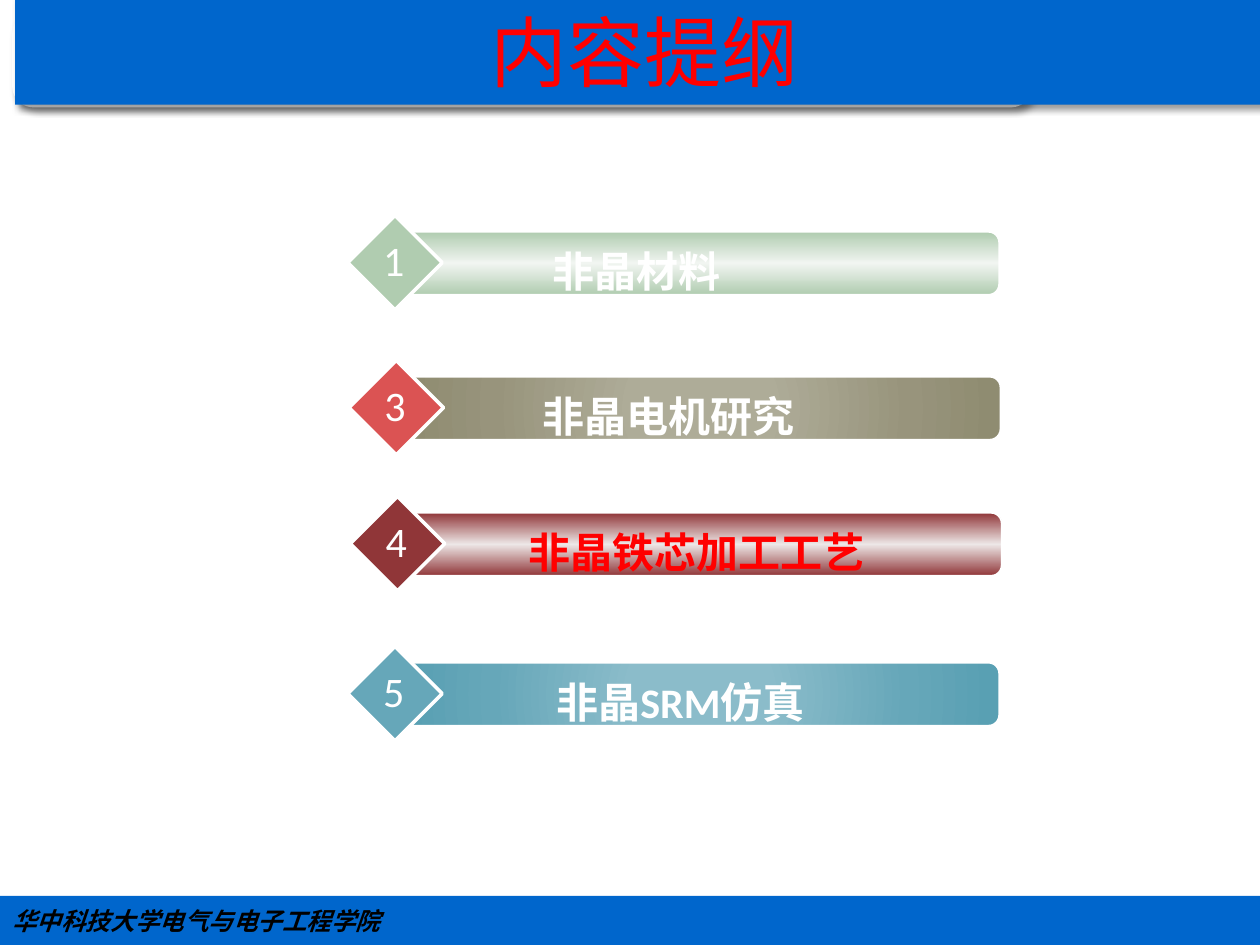
from lxml import etree
from pptx import Presentation
from pptx.dml.color import RGBColor
from pptx.enum.shapes import MSO_SHAPE
from pptx.enum.text import MSO_ANCHOR, MSO_AUTO_SIZE, PP_ALIGN
from pptx.oxml.ns import qn
from pptx.util import Inches, Pt

RECT, ROUND, DIAMOND = MSO_SHAPE.RECTANGLE, MSO_SHAPE.ROUNDED_RECTANGLE, MSO_SHAPE.DIAMOND
LEFT, CENTER, MIDDLE = PP_ALIGN.LEFT, PP_ALIGN.CENTER, MSO_ANCHOR.MIDDLE
FIT_SHAPE = MSO_AUTO_SIZE.SHAPE_TO_FIT_TEXT

BLUE = RGBColor(0x00, 0x66, 0xCC)
RED = RGBColor(0xFF, 0x00, 0x00)
BLACK = RGBColor(0x00, 0x00, 0x00)
WHITE = RGBColor(0xFF, 0xFF, 0xFF)
GREEN, PALE_GREEN = RGBColor(0xB0, 0xCC, 0xB0), RGBColor(0xF1, 0xF5, 0xF1)
CORAL = RGBColor(0xDB, 0x53, 0x53)
MAROON, PALE_MAROON = RGBColor(0x90, 0x36, 0x38), RGBColor(0xED, 0xE7, 0xE7)
TEAL, PALE_TEAL, DEEP_TEAL = (RGBColor(0x66, 0xA7, 0xB9), RGBColor(0x8B, 0xBC, 0xCA),
                              RGBColor(0x59, 0xA0, 0xB3))
OLIVE, PALE_OLIVE, DEEP_OLIVE = (RGBColor(0x98, 0x94, 0x7C), RGBColor(0xAE, 0xAC, 0x98),
                                 RGBColor(0x8F, 0x8C, 0x71))
LILAC, SKY, SAGE = (RGBColor(0x84, 0x88, 0xC4), RGBColor(0xD4, 0xDE, 0xFF),
                    RGBColor(0x96, 0xAB, 0x94))


def banded(edge, middle):
    return [(0, edge), (50, middle), (100, edge)]


def radial(pale, mid, deep):
    return [(0, pale), (23, pale), (69, mid), (97, deep)]


class Deck:
    """Style and current slide; lengths are cells of a 100 x 75 grid."""
    latin, cjk = "Calibri", "Noto Sans CJK SC"

    def __init__(self, prs):
        self.prs = prs
        self.cell = prs.slide_width / 100
        self.s = prs.slides.add_slide(prs.slide_layouts[5])

    def box(self, *cells):
        return [round(c * self.cell) for c in cells]

    def set_text(self, sp, text, size, color, font=latin, align=CENTER,
                 bold=False, italic=False, indent=0):
        p = sp.text_frame.paragraphs[0]
        p.text = text
        p.alignment = align
        f = p.font
        f.size, f.bold, f.italic, f.name = Pt(size), bold, italic, font
        f.color.rgb = color
        pPr = p._p.get_or_add_pPr()
        if indent:
            pPr.set("marL", str(self.box(indent)[0]))
            pPr.set("indent", "0")
        etree.SubElement(pPr.find(qn("a:defRPr")), qn("a:ea"), typeface=self.cjk)

    def shape(self, kind, cells, fill=None, line=None, width=1):
        sp = self.s.shapes.add_shape(kind, *self.box(*cells))
        sp.shadow.inherit = False
        if fill is not None:
            sp.fill.solid()
            sp.fill.fore_color.rgb = fill
        if line is None:
            sp.line.fill.background()
        else:
            sp.line.color.rgb = line
            sp.line.width = Pt(width)
        return sp

    def gradient(self, sp, stops, circle=False):
        sp.fill.gradient()
        grad = sp._element.spPr.find(qn("a:gradFill"))
        for child in list(grad):
            grad.remove(child)
        gs_list = etree.SubElement(grad, qn("a:gsLst"))
        for pos, color in stops:
            gs = etree.SubElement(gs_list, qn("a:gs"), pos=str(pos * 1000))
            etree.SubElement(gs, qn("a:srgbClr"), val=str(color))
        if circle:
            way = etree.SubElement(grad, qn("a:path"), path="circle")
            etree.SubElement(way, qn("a:fillToRect"), l="50000", t="50000",
                             r="50000", b="50000")
        else:
            etree.SubElement(grad, qn("a:lin"), ang="5400000", scaled="1")

    def shadow(self, sp):
        sp.shadow.inherit = False
        effects = sp._element.spPr.find(qn("a:effectLst"))
        outer = etree.SubElement(effects, qn("a:outerShdw"), blurRad=str(Pt(4)),
                                 dist=str(Pt(3)), dir="2700000", algn="tl", rotWithShape="0")
        color = etree.SubElement(outer, qn("a:srgbClr"), val=str(BLACK))
        etree.SubElement(color, qn("a:alpha"), val="40000")

    def title(self, text, cells):
        sp = self.s.shapes.title
        sp.left, sp.top, sp.width, sp.height = self.box(*cells)
        sp.fill.solid()
        sp.fill.fore_color.rgb = BLUE
        self.shadow(sp)
        sp.text_frame.vertical_anchor = MIDDLE
        self.set_text(sp, text, 44, RED, font=self.cjk)
        self.s.shapes._spTree.append(sp._element)  # above the backing panel

    def text(self, text, cells, wrap=True, color=WHITE, **style):
        sp = self.s.shapes.add_textbox(*self.box(*cells))
        sp.text_frame.word_wrap = wrap
        sp.text_frame.auto_size = FIT_SHAPE
        self.set_text(sp, text, 24, color, **style)

    def item(self, number, label, x, y, label_x, indent, color, tile, stops, circle):
        bar = self.shape(ROUND, (x + 4.2, y + 1.3, 47.5, 5), line=WHITE)
        bar.adjustments[0] = 0.17
        self.gradient(bar, stops, circle)
        self.shape(DIAMOND, (x, y, 7.5, 7.5), tile, WHITE, 2)
        self.text(label, (label_x, y + 1.9, 37.5, 5), color=color, bold=True, indent=indent)
        self.text(number, (x + 1.7, y + 1, 3.9, 5), wrap=False)


# number, label, left, top, label left, label indent, label colour, tile, bar, circular
ITEMS = [
    ("1", "非晶材料", 27.6, 17.1, 30.3, 2.9, WHITE, GREEN, banded(GREEN, PALE_GREEN), False),
    ("3", "非晶电机研究", 27.7, 28.6, 34.3, 0, WHITE, CORAL,
     radial(PALE_OLIVE, OLIVE, DEEP_OLIVE), True),
    ("4", "非晶铁芯加工工艺", 27.8, 39.4, 34.3, 4.5, RED, MAROON,
     banded(MAROON, PALE_MAROON), False),
    ("5", "非晶SRM仿真", 27.6, 51.3, 30.3, 9.9, WHITE, TEAL,
     radial(PALE_TEAL, TEAL, DEEP_TEAL), True),
]


def main():
    prs = Presentation()
    prs.slide_width, prs.slide_height = Inches(10), Inches(7.5)
    deck = Deck(prs)

    # Header: backing panel and title
    panel = deck.shape(ROUND, (1.6, 1.6, 79.7, 6.3), line=WHITE, width=9)
    deck.gradient(panel, [(0, LILAC), (53, SKY), (83, SKY), (100, SAGE)])
    deck.shadow(panel)
    deck.title("内容提纲", (1.2, -0.3, 100, 8.6))

    # Footer
    footer = deck.shape(RECT, (0, 71.1, 100, 3.9), BLUE)
    footer.text_frame.vertical_anchor = MIDDLE
    deck.set_text(footer, "华中科技大学电气与电子工程学院", 14, BLACK, font=deck.cjk,
                  align=LEFT, bold=True, italic=True)

    # Agenda
    for item in ITEMS:
        deck.item(*item)

    prs.save("out.pptx")


if __name__ == "__main__":
    main()
